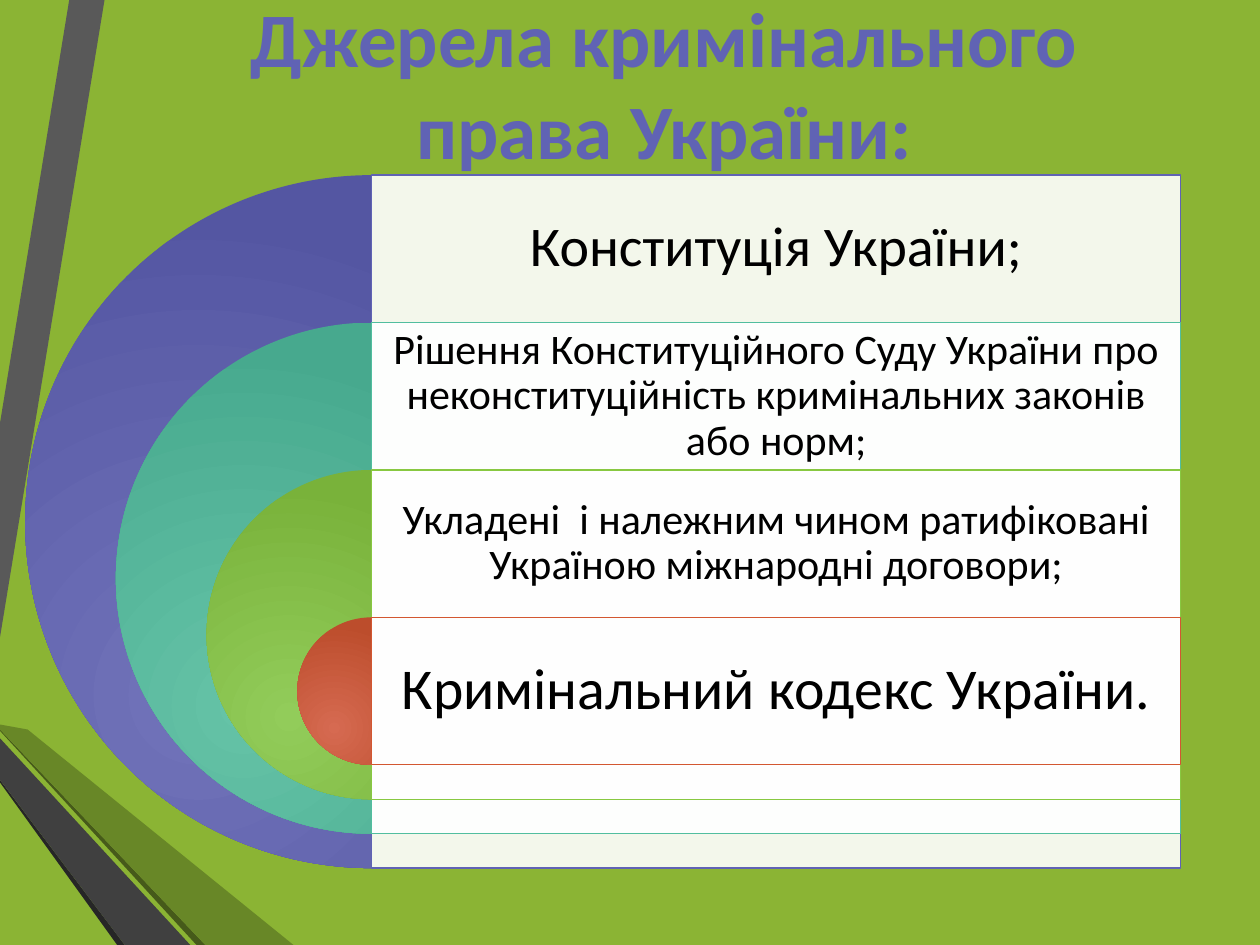
from lxml.etree import SubElement
from pptx import Presentation
from pptx.dml.color import RGBColor as RGB
from pptx.enum.shapes import MSO_SHAPE as Shape
from pptx.enum.text import MSO_ANCHOR as Anchor, PP_ALIGN as Align
from pptx.oxml.ns import qn
from pptx.util import Inches, Pt

COLORS = {
    "background": "8BB434", "title": "6063B4", "text": "000000", "panel": "FFFFFF",
    "stripe": "595959", "shade": "262626", "olive": "465A1A", "leaf": "688727", "wedge": "404040",
}
FACETS = [
    ("stripe", [(0.83, 0), (0.55, 0), (0, 3.36), (0, 5.06)]),
    ("shade", [(0, 6.19), (0, 6.21), (0.93, 7.5), (0.99, 7.5)]),
    ("olive", [(0, 5.79), (0, 5.8), (1.56, 7.5), (1.63, 7.5)]),
    ("leaf", [(0, 5.79), (1.63, 7.5), (2.33, 7.5), (0.22, 5.79), (0, 5.75)]),
    ("wedge", [(0, 6.19), (0.99, 7.5), (1.51, 7.5), (0, 5.86)]),
]
SOURCES = [
    ("Конституція України;", 32, 0.13, "6063B4", "7173BA", "5456A2"),
    ("Рішення Конституційного Суду України про неконституційність кримінальних законів або норм;",
     24, 0.1, "51BE9F", "65C3A7", "47A98E"),
    ("Укладені  і належним чином ратифіковані Україною міжнародні договори;",
     24, 0.1, "88C841", "92CC5A", "79B23A"),
    ("Кримінальний кодекс України.", 33, 0.14, "D35731", "D66A51", "BC4D2C"),
]
LEFT, TOP, DIAMETER = 0.2, 1.39, 5.5
INDENT, BAND, SHRINK = 0.72, 1.17, 1.443
PANEL_LEFT, PANEL_WIDTH = 2.95, 6.42


def write(frame, text, size, color="text", bold=False, spacing=None, inset=None):
    """Put one centred, formatted paragraph into a text frame."""
    frame.word_wrap = True
    frame.vertical_anchor = Anchor.MIDDLE
    if inset is not None:
        frame.margin_left = frame.margin_right = Inches(inset)
        frame.margin_top = frame.margin_bottom = Inches(inset)
    paragraph = frame.paragraphs[0]
    paragraph.alignment = Align.CENTER
    paragraph.line_spacing = spacing
    run = paragraph.add_run()
    run.text = text
    run.font.name, run.font.size, run.font.bold = "Calibri", Pt(size), bold
    run.font.color.rgb = RGB.from_string(COLORS[color])


class SourcesSlide:
    """Holds the slide and draws its elements in one style."""

    def __init__(self, deck):
        self.slide = deck.slides.add_slide(deck.slide_layouts[5])
        self.shapes = self.slide.shapes
        backdrop = self.slide.background.fill
        backdrop.solid()
        backdrop.fore_color.rgb = RGB.from_string(COLORS["background"])

    def title(self, text, *box):
        heading = self.shapes.title
        heading.left, heading.top, heading.width, heading.height = map(Inches, box)
        write(heading.text_frame, text, 44, color="title", bold=True)

    def facet(self, color, corners):
        points = [(Inches(x), Inches(y)) for x, y in corners]
        outline = self.shapes.build_freeform(*points[0])
        outline.add_line_segments(points[1:], close=True)
        facet = outline.convert_to_shape()
        facet.shadow.inherit = False
        facet.fill.solid()
        facet.fill.fore_color.rgb = RGB.from_string(COLORS[color])
        facet.line.fill.background()

    def half_disc(self, left, top, diameter, inner, outer):
        disc = self.shapes.add_shape(Shape.PIE, *map(Inches, (left, top, diameter, diameter)))
        disc.shadow.inherit = False
        disc.adjustments[0], disc.adjustments[1] = 54, 162
        disc.line.fill.background()
        disc.fill.gradient()
        for stop, position, color in zip(disc.fill.gradient_stops, (0, 1), (inner, outer)):
            stop.position = position
            stop.color.rgb = RGB.from_string(color)
        gradient = disc._element.spPr.find(qn("a:gradFill"))
        gradient.remove(gradient.find(qn("a:lin")))
        radial = SubElement(gradient, qn("a:path"), path="circle")
        SubElement(radial, qn("a:fillToRect"), l="50000", t="100000", r="100000", b="50000")

    def panel(self, top, height, border):
        panel = self.shapes.add_shape(
            Shape.RECTANGLE, *map(Inches, (PANEL_LEFT, top, PANEL_WIDTH, height)))
        panel.shadow.inherit = False
        panel.fill.solid()
        panel.fill.fore_color.rgb = RGB.from_string(COLORS["panel"])
        tint = panel._element.spPr.find(qn("a:solidFill"))[0]
        SubElement(tint, qn("a:alpha"), val="90000")
        panel.line.color.rgb = RGB.from_string(border)
        panel.line.width = Pt(0.75)

    def label(self, text, top, size, inset):
        label = self.shapes.add_textbox(*map(Inches, (PANEL_LEFT, top, PANEL_WIDTH, BAND)))
        write(label.text_frame, text, size, spacing=0.9, inset=inset)


def main():
    deck = Presentation()
    deck.slide_width, deck.slide_height = Inches(10), Inches(7.5)
    page = SourcesSlide(deck)
    for color, corners in FACETS:
        page.facet(color, corners)
    page.title("Джерела кримінального права України:", 1.06, 0, 8.43, 1.31)
    for level, (text, size, inset, border, inner, outer) in enumerate(SOURCES):
        top = TOP + level * BAND
        diameter = DIAMETER - level * SHRINK
        page.half_disc(LEFT + level * INDENT, top, diameter, inner, outer)
        page.panel(top, diameter, border)
        page.label(text, top, size, inset)
    deck.save("out.pptx")


if __name__ == "__main__":
    main()
